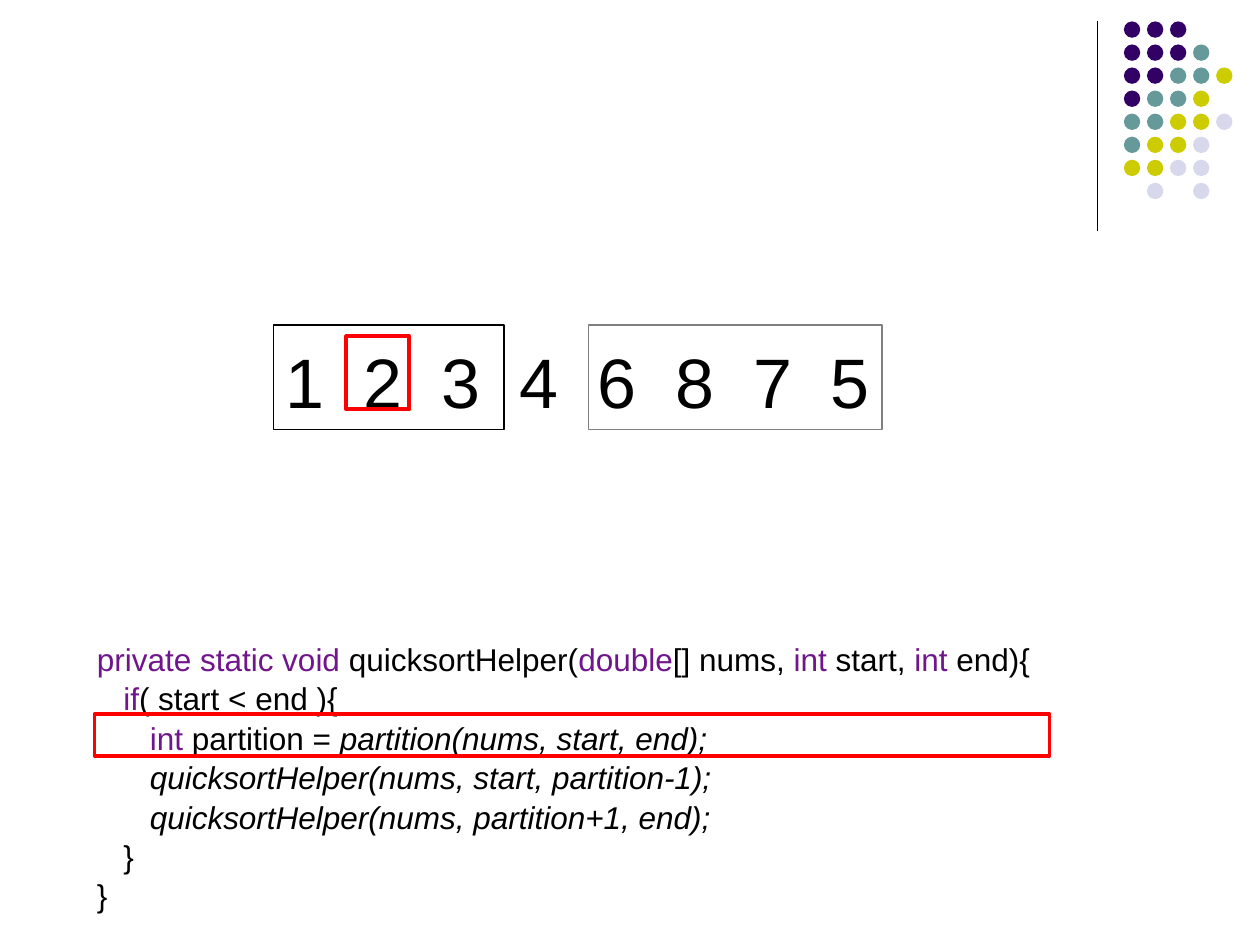
from lxml import etree
from pptx import Presentation
from pptx.dml.color import RGBColor
from pptx.enum.shapes import MSO_CONNECTOR, MSO_SHAPE
from pptx.oxml.ns import qn
from pptx.util import Inches, Pt

OVAL, RECT = MSO_SHAPE.OVAL, MSO_SHAPE.RECTANGLE
LINE = MSO_CONNECTOR.STRAIGHT
BLACK, RED, GRAY, KEY = "000000", "FF0000", "808080", "70158B"

DOTS = ["PPP", "PPPT", "PPTTY", "PTTY", "TTYYL", "TYYL", "YYLL", " L L"]
HUES = {"P": "330066", "T": "669999", "Y": "CCCC00", "L": "D8D8EC"}

NUMS = [1, 2, 3, 4, 6, 8, 7, 5]
CODE = [
    (0, [("private static void ", "key"), ("quicksortHelper(", ""),
         ("double", "key"), ("[] nums, ", ""), ("int", "key"),
         (" start, ", ""), ("int", "key"), (" end){", "")]),
    (1, [("if", "key"), ("( start < end ){", "")]),
    (2, [("int", "key"), (" partition = ", ""),
         ("partition(nums, start, end);", "call")]),
    (2, [("quicksortHelper(nums, start, partition-1);", "call")]),
    (2, [("quicksortHelper(nums, partition+1, end);", "call")]),
    (1, [("}", "")]),
    (0, [("}", "")]),
]
FRAMES = [
    (0.75, 5.67, 7.58, 0.33, RED, 2.25),
    (2.17, 2.58, 1.83, 0.83, BLACK, 0.75),
    (2.75, 2.67, 0.5, 0.58, RED, 2.25),
    (4.67, 2.58, 2.33, 0.83, GRAY, 0.75),
]
DOT, STEP = 0.13, 0.183
INDENT, PITCH = 0.21, 0.618


def color(code):
    return RGBColor.from_string(code)


def style(run, size, hue):
    run.font.name = "Arial"
    run.font.size = Pt(size)
    run.font.color.rgb = color(hue)


def add_rule(slide):
    rule = slide.shapes.add_connector(
        LINE, Inches(8.71), Inches(0.17), Inches(8.71), Inches(1.83))
    rule.line.color.rgb = color(BLACK)
    rule.line.width = Pt(0.75)
    etree.SubElement(rule._element.spPr, qn("a:effectLst"))


def add_dots(slide):
    group = slide.shapes.add_group_shape()
    for row, marks in enumerate(DOTS):
        for col, mark in enumerate(marks):
            if mark in HUES:
                dot = group.shapes.add_shape(
                    OVAL, Inches(8.92 + col * STEP),
                    Inches(0.17 + row * STEP), Inches(DOT), Inches(DOT))
                dot.shadow.inherit = False
                dot.fill.solid()
                dot.fill.fore_color.rgb = color(HUES[mark])
                dot.line.fill.background()


def add_text(slide, *box):
    frame = slide.shapes.add_textbox(*map(Inches, box)).text_frame
    frame.word_wrap = True
    return frame


def add_code(slide):
    frame = add_text(slide, 0.67, 5.03, 8.42, 2.22)
    for i, (depth, parts) in enumerate(CODE):
        para = frame.add_paragraph() if i else frame.paragraphs[0]
        para.space_before = Pt(0.9)
        props = para._p.get_or_add_pPr()
        props.set("marL", str(Inches(depth * INDENT)))
        props.set("indent", "0")
        for text, kind in parts:
            run = para.add_run()
            run.text = text
            style(run, 18, KEY if kind == "key" else BLACK)
            run.font.italic = kind == "call"


def add_nums(slide):
    frame = add_text(slide, 2.17, 2.58, 5.25, 0.77)
    frame.margin_top = Inches(0.11)
    para = frame.paragraphs[0]
    para.text = "\t".join(map(str, NUMS))
    style(para.runs[0], 40, BLACK)
    tabs = etree.SubElement(para._p.get_or_add_pPr(), qn("a:tabLst"))
    for i in range(1, len(NUMS)):
        etree.SubElement(tabs, qn("a:tab"),
                         pos=str(Inches(i * PITCH)), algn="l")


def add_frame(slide, x, y, w, h, hue, width):
    frame = slide.shapes.add_shape(RECT, *map(Inches, (x, y, w, h)))
    frame.shadow.inherit = False
    frame.fill.background()
    frame.line.color.rgb = color(hue)
    frame.line.width = Pt(width)


def main():
    deck = Presentation()
    deck.slide_width, deck.slide_height = Inches(10), Inches(7.5)
    slide = deck.slides.add_slide(deck.slide_layouts[6])
    add_rule(slide)
    add_dots(slide)
    add_code(slide)
    add_nums(slide)
    for frame in FRAMES:
        add_frame(slide, *frame)
    deck.save("out.pptx")


if __name__ == "__main__":
    main()
